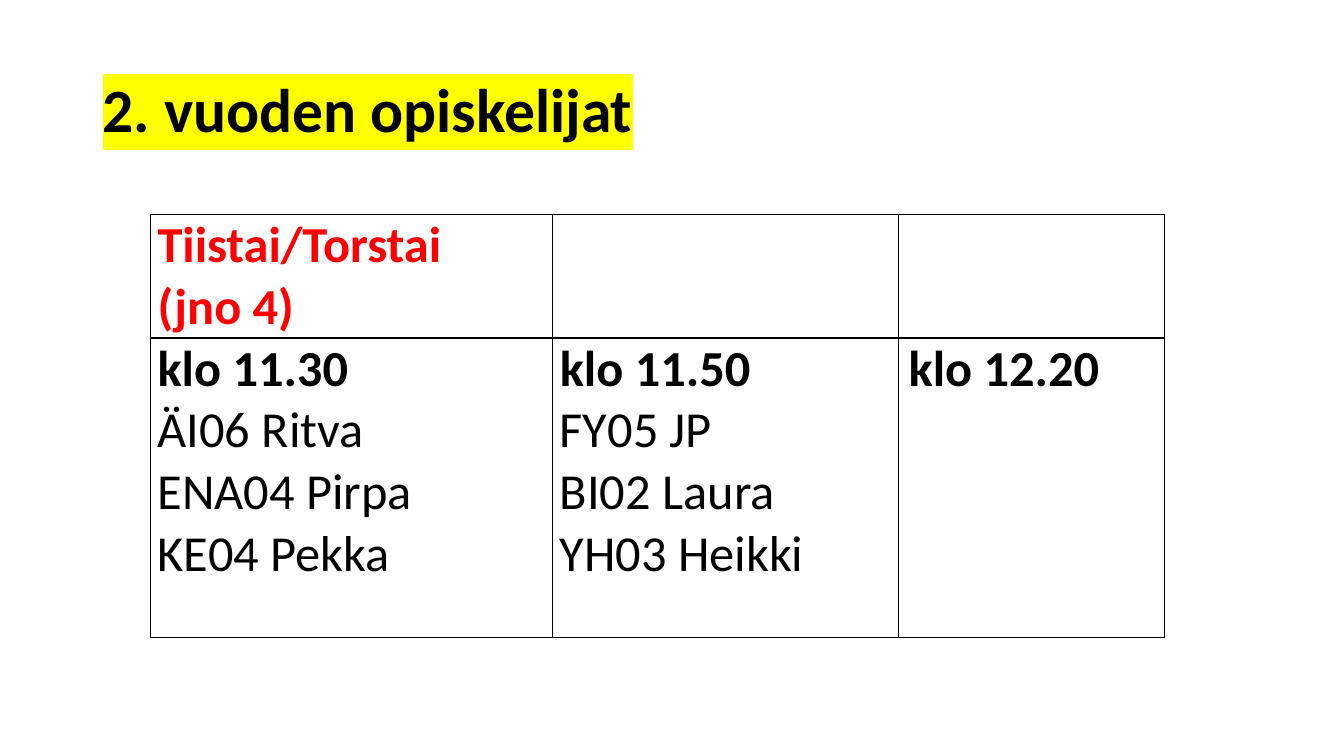
from dataclasses import dataclass

from lxml import etree
from pptx import Presentation
from pptx import util as u
from pptx.dml.color import RGBColor
from pptx.enum import text
from pptx.oxml.ns import qn
from pptx.table import _Cell

BLACK = RGBColor(0x00, 0x00, 0x00)
RED = RGBColor(0xFF, 0x00, 0x00)
YELLOW = RGBColor(0xFF, 0xFF, 0x00)
FONT = "Calibri"
WIDE, HIGH = u.Inches(13.33), u.Inches(7.5)
COLS = (3.99, 3.43, 2.64)
ROWS = (1.22, 2.97)


@dataclass
class Entry:
    row: int
    col: int
    head: list[str]
    body: list[str]
    color: RGBColor = BLACK
    inset: float = 0.07


ENTRIES = [
    Entry(0, 0, ["Tiistai/Torstai", "(jno 4)"], [], RED),
    Entry(1, 0, ["klo 11.30"], ["ÄI06 Ritva", "ENA04 Pirpa", "KE04 Pekka"]),
    Entry(1, 1, ["klo 11.50"], ["FY05 JP", "BI02 Laura", "YH03 Heikki"]),
    Entry(1, 2, ["klo 12.20"], [], inset=0.1),
]


def style(font, size: int, bold: bool, color: RGBColor) -> None:
    font.name, font.size, font.bold = FONT, u.Pt(size), bold
    font.color.rgb = color


def add_title(slide, words: str) -> None:
    title = slide.shapes.title
    title.left, title.top = int(WIDE * 0.069), int(HIGH * 0.053)
    title.width, title.height = int(WIDE * 0.863), int(HIGH * 0.193)
    frame = title.text_frame
    frame.auto_size = text.MSO_AUTO_SIZE.NONE
    frame.vertical_anchor = text.MSO_ANCHOR.MIDDLE
    par = frame.paragraphs[0]
    par.alignment = text.PP_ALIGN.LEFT
    par.line_spacing = 0.9
    run = par.add_run()
    run.text = words
    style(run.font, 44, True, BLACK)
    # Yellow marker behind the words
    mark = etree.Element(qn("a:highlight"))
    etree.SubElement(mark, qn("a:srgbClr"), val=str(YELLOW))
    run.font._element.find(qn("a:solidFill")).addnext(mark)


def set_edges(cell: _Cell) -> None:
    props = cell._tc.get_or_add_tcPr()
    for spot, side in enumerate(("lnL", "lnR", "lnT", "lnB")):
        line = etree.Element(qn(f"a:{side}"), w=str(u.Pt(1)))
        fill = etree.SubElement(line, qn("a:solidFill"))
        etree.SubElement(fill, qn("a:srgbClr"), val=str(BLACK))
        props.insert(spot, line)


def fill_cell(cell: _Cell, entry: Entry) -> None:
    cell.margin_left = u.Inches(entry.inset)
    cell.margin_right = u.Inches(0.07)
    cell.margin_top = cell.margin_bottom = 0
    lines = entry.head + entry.body
    cell.text = "\n".join(lines)
    for spot, par in enumerate(cell.text_frame.paragraphs):
        style(par.font, 36, spot < len(entry.head), entry.color)


def add_plan(slide) -> None:
    frame = slide.shapes.add_table(
        len(ROWS), len(COLS), int(WIDE * 0.112), int(HIGH * 0.284),
        u.Inches(sum(COLS)), u.Inches(sum(ROWS)))
    table = frame.table
    table.first_row = table.horz_banding = False
    for col, size in zip(table.columns, COLS):
        col.width = u.Inches(size)
    for row, size in zip(table.rows, ROWS):
        row.height = u.Inches(size)
    for cell in table.iter_cells():
        cell.fill.background()
        set_edges(cell)
    for entry in ENTRIES:
        fill_cell(table.cell(entry.row, entry.col), entry)


def main() -> None:
    deck = Presentation()
    deck.slide_width, deck.slide_height = WIDE, HIGH
    slide = deck.slides.add_slide(deck.slide_layouts[5])
    add_title(slide, "2. vuoden opiskelijat")
    add_plan(slide)
    deck.save("out.pptx")


if __name__ == "__main__":
    main()
